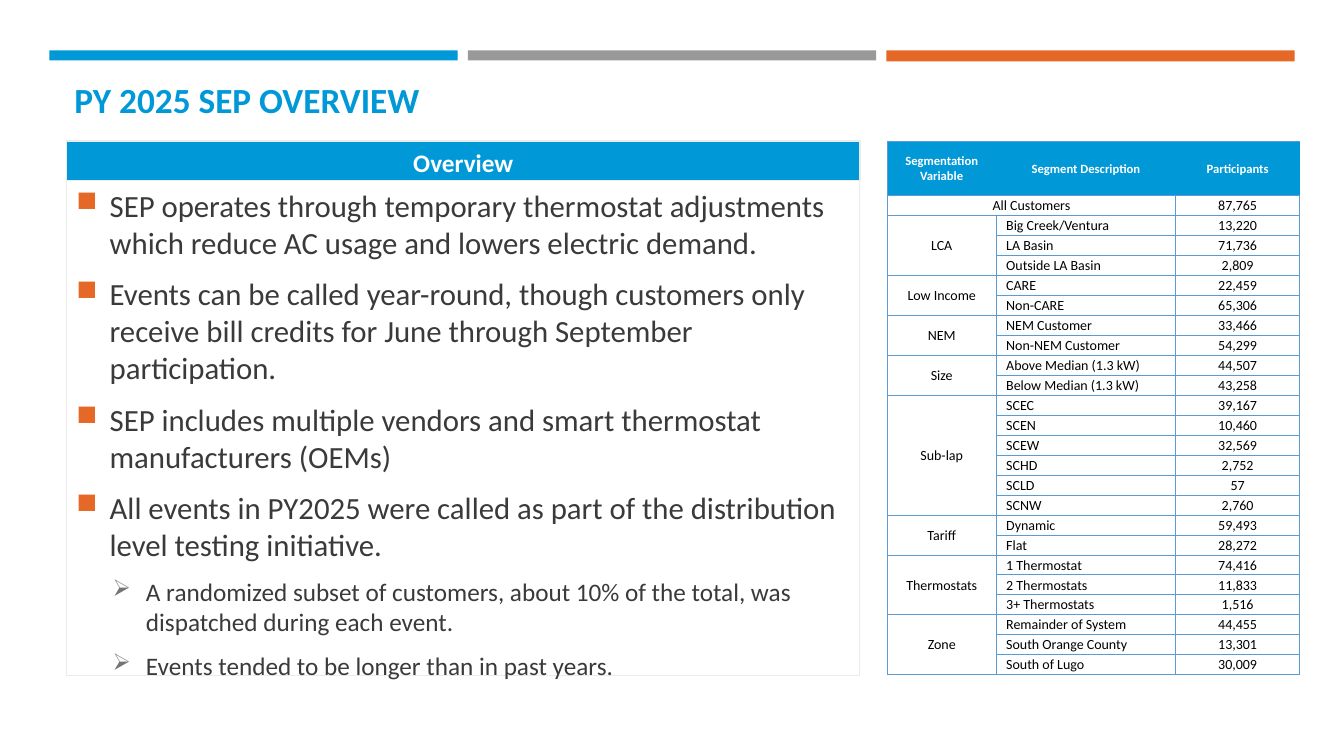
from lxml.etree import SubElement
from pptx import Presentation
from pptx.dml.color import RGBColor
from pptx.enum.shapes import MSO_SHAPE
from pptx.enum.text import MSO_ANCHOR, PP_ALIGN
from pptx.oxml import parse_xml
from pptx.oxml.ns import nsdecls, qn
from pptx.util import Inches, Pt

BLUE, ORANGE, GRAY = "0098D7", "E66827", "999999"
WHITE, PALE, INK = "FFFFFF", "EBEBEB", "3A3A3A"
GRID = "5B9BD5"


def color(value):
    return RGBColor.from_string(value)


def set_font(paragraph, size, value, bold=False):
    font = paragraph.font
    for name, setting in {"name": "Calibri", "size": Pt(size), "bold": bold}.items():
        setattr(font, name, setting)
    font.color.rgb = color(value)


prs = Presentation()
prs.slide_width, prs.slide_height = Inches(13.33), Inches(7.5)
slide = prs.slides.add_slide(prs.slide_layouts[6])

panels = [
    (0.49, 0.5, 4.05, 0.1, BLUE, None, 0),
    (4.64, 0.5, 4.05, 0.1, GRAY, None, 0),
    (8.79, 0.5, 4.05, 0.11, ORANGE, None, 0),
    (0.66, 1.4, 7.87, 0.39, BLUE, PALE, 1),
    (0.66, 1.79, 7.87, 4.91, None, PALE, 0.75),
]
drawn = []
for left, top, width, height, fill, line, weight in panels:
    panel = slide.shapes.add_shape(
        MSO_SHAPE.RECTANGLE, Inches(left), Inches(top), Inches(width), Inches(height))
    panel.shadow.inherit = False
    if fill:
        panel.fill.solid()
        panel.fill.fore_color.rgb = color(fill)
    else:
        panel.fill.background()
    if line:
        panel.line.color.rgb = color(line)
        panel.line.width = Pt(weight)
    else:
        panel.line.fill.background()
    drawn.append(panel)
overview_heading, overview_body = drawn[3:]

title = slide.shapes.add_textbox(Inches(0.64), Inches(0.77), Inches(12.06), Inches(0.48)).text_frame
title.word_wrap = True
title.vertical_anchor = MSO_ANCHOR.BOTTOM
title.text = "PY 2025 SEP OVERVIEW"
set_font(title.paragraphs[0], 25.2, BLUE, True)

heading = overview_heading.text_frame
heading.text = "Overview"
heading.vertical_anchor = MSO_ANCHOR.MIDDLE
heading.margin_top, heading.margin_bottom = Inches(0.07), Inches(0.04)
heading.paragraphs[0].alignment = PP_ALIGN.CENTER
set_font(heading.paragraphs[0], 18, WHITE, True)

points = [
    (0, "SEP operates through temporary thermostat adjustments which reduce AC usage and lowers electric demand."),
    (0, "Events can be called year-round, though customers only receive bill credits for June through September participation."),
    (0, "SEP includes multiple vendors and smart thermostat manufacturers (OEMs)"),
    (0, "All events in PY2025 were called as part of the distribution level testing initiative."),
    (1, "A randomized subset of customers, about 10% of the total, was dispatched during each event."),
    (1, "Events tended to be longer than in past years."),
]
levels = [("■", ORANGE, 22, 0.33), ("➢", "757575", 18, 0.69)]
body = overview_body.text_frame
body.word_wrap = True
body.vertical_anchor = MSO_ANCHOR.TOP
body.margin_top = Inches(0.06)
for index, (level, text) in enumerate(points):
    mark, mark_color, size, indent = levels[level]
    point = body.add_paragraph() if index else body.paragraphs[0]
    point.text = text
    point.level = level
    properties = point._p.get_or_add_pPr()
    properties.set("marL", str(Inches(indent)))
    properties.set("indent", str(-Inches(0.33)))
    bullet_color = SubElement(properties, qn("a:buClr"))
    SubElement(bullet_color, qn("a:srgbClr"), val=mark_color)
    SubElement(properties, qn("a:buSzPct"), val="92000")
    SubElement(properties, qn("a:buChar"), char=mark)
    point.alignment = PP_ALIGN.LEFT
    point.space_before = Pt(size * 0.2 if index else 0)
    point.space_after = Pt(6)
    set_font(point, size, INK)

segments = [
    ("LCA", [("Big Creek/Ventura", "13,220"), ("LA Basin", "71,736"), ("Outside LA Basin", "2,809")]),
    ("Low Income", [("CARE", "22,459"), ("Non-CARE", "65,306")]),
    ("NEM", [("NEM Customer", "33,466"), ("Non-NEM Customer", "54,299")]),
    ("Size", [("Above Median (1.3 kW)", "44,507"), ("Below Median (1.3 kW)", "43,258")]),
    ("Sub-lap", [("SCEC", "39,167"), ("SCEN", "10,460"), ("SCEW", "32,569"),
                 ("SCHD", "2,752"), ("SCLD", "57"), ("SCNW", "2,760")]),
    ("Tariff", [("Dynamic", "59,493"), ("Flat", "28,272")]),
    ("Thermostats", [("1 Thermostat", "74,416"), ("2 Thermostats", "11,833"), ("3+ Thermostats", "1,516")]),
    ("Zone", [("Remainder of System", "44,455"), ("South Orange County", "13,301"), ("South of Lugo", "30,009")]),
]
rows = [("Segmentation Variable", "Segment Description", "Participants"),
        ("All Customers", "", "87,765")]
merges = [(1, 0, 1, 1)]
for variable, members in segments:
    merges.append((len(rows), 0, len(rows) + len(members) - 1, 0))
    for position, (description, count) in enumerate(members):
        rows.append(("" if position else variable, description, count))

table = slide.shapes.add_table(
    len(rows), 3, Inches(8.8), Inches(1.4), Inches(4.09), Inches(5.3)).table
table.first_row = table.horz_banding = False
for column, width in zip(table.columns, (1.08, 1.78, 1.23)):
    column.width = Inches(width)
for row in table.rows:
    row.height = Inches((5.3 - 0.54) / (len(rows) - 1))
table.rows[0].height = Inches(0.54)

for r, values in enumerate(rows):
    for c, value in enumerate(values):
        cell = table.cell(r, c)
        cell.text = value
        is_description = r > 1 and c == 1
        settings = {"margin_left": Inches(0.1 if is_description else 0.01),
                    "margin_right": Inches(0.01), "margin_top": Inches(0.01),
                    "margin_bottom": 0, "vertical_anchor": MSO_ANCHOR.MIDDLE}
        for name, setting in settings.items():
            setattr(cell, name, setting)
        paragraph = cell.text_frame.paragraphs[0]
        paragraph.alignment = PP_ALIGN.LEFT if is_description else PP_ALIGN.CENTER
        set_font(paragraph, 10 if r else 9, "000000" if r else WHITE, r == 0)
        for side in "LRTB":
            hidden = r == 0 and (side == "R" or side == "L" and c > 0)
            stroke = "<a:noFill/>" if hidden else f'<a:solidFill><a:srgbClr val="{GRID}"/></a:solidFill>'
            cell._tc.get_or_add_tcPr().append(parse_xml(
                f'<a:ln{side} {nsdecls("a")} w="{Pt(0.5)}">{stroke}</a:ln{side}>'))
        if r == 0:
            cell.fill.solid()
            cell.fill.fore_color.rgb = color(BLUE)
        else:
            cell.fill.background()

for first_row, first_column, last_row, last_column in merges:
    table.cell(first_row, first_column).merge(table.cell(last_row, last_column))

prs.save("out.pptx")
